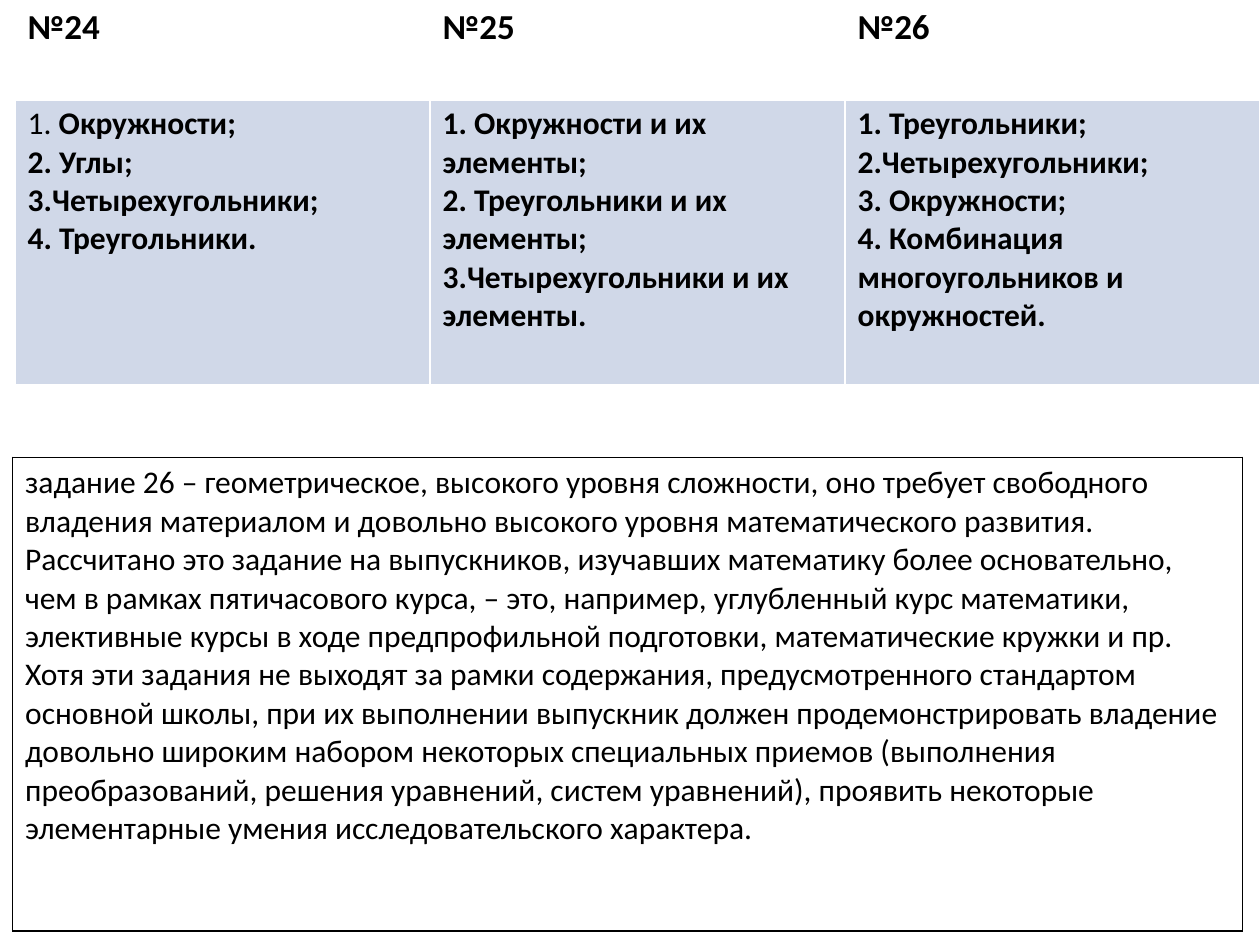
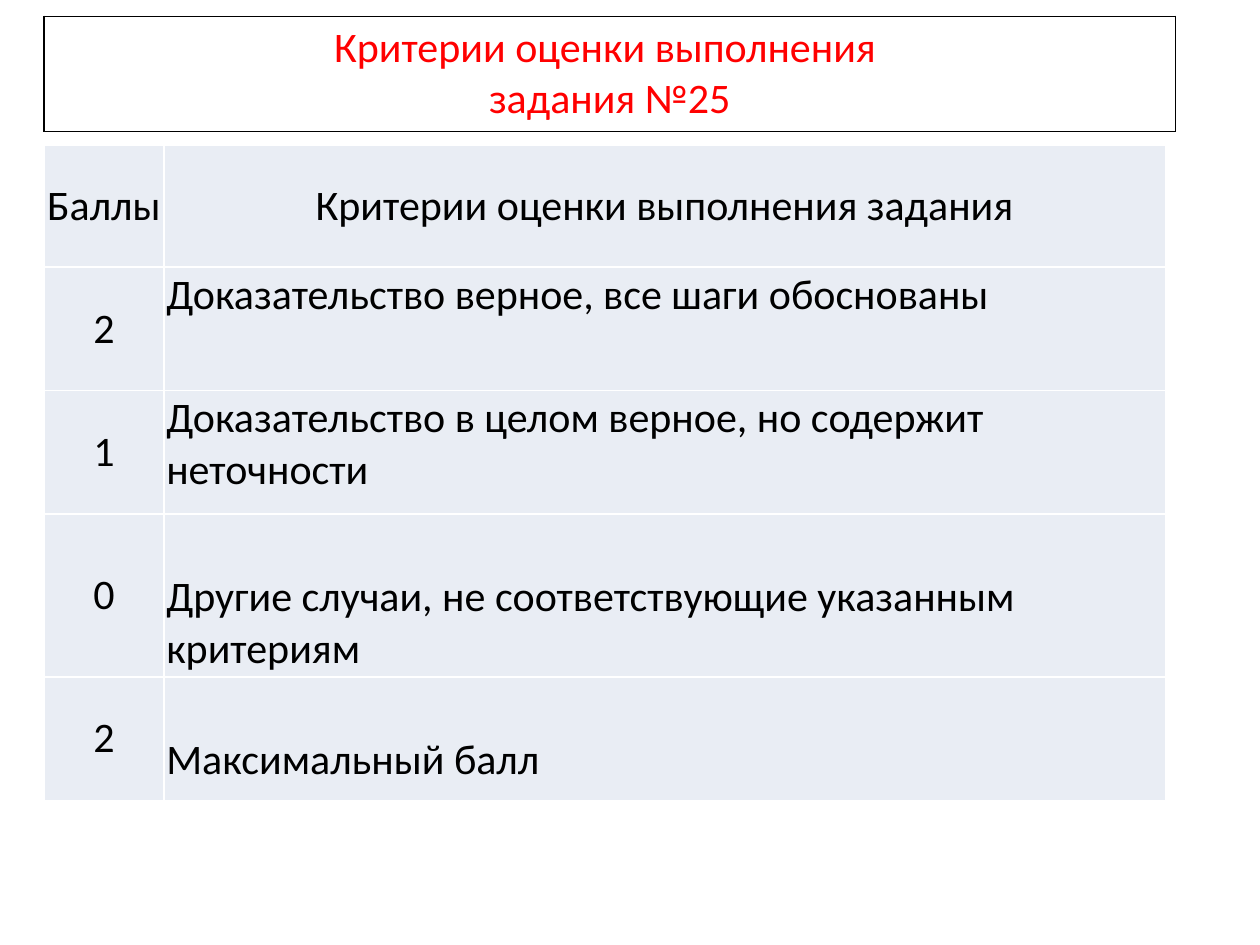
import pptx
import pptx.util
import pptx.dml.color
import pptx.enum.text
import pptx.oxml
import pptx.oxml.ns

Inches = pptx.util.Inches
Pt = pptx.util.Pt
PP_ALIGN = pptx.enum.text.PP_ALIGN
ANCHOR = pptx.enum.text.MSO_ANCHOR

FONT = "Calibri"
COLORS = {
    "text": "000000",
    "title": "FF0000",
    "frame": "000000",
    "grid": "FFFFFF",
    "heading": "FFFFFF",
    "topics": "D0D8E8",
    "criteria": "E9EDF4",
}

TOPICS = {
    "№24": [
        [("1.", False), (" Окружности;", True)],
        [("2. Углы;", True)],
        [("3.Четырехугольники;", True)],
        [("4. Треугольники.", True)],
    ],
    "№25": [
        [("1. Окружности и их элементы;", True)],
        [("2. Треугольники и их элементы;", True)],
        [("3.Четырехугольники и их элементы.", True)],
    ],
    "№26": [
        [("1. Треугольники;", True)],
        [("2.Четырехугольники;", True)],
        [("3. Окружности;", True)],
        [("4. Комбинация многоугольников и окружностей.", True)],
    ],
}

TASK_26 = (
    "задание 26 – геометрическое, высокого уровня сложности, оно требует свободного "
    "владения материалом и довольно высокого уровня математического развития. "
    "Рассчитано это задание на выпускников, изучавших математику более основательно, "
    "чем в рамках пятичасового курса, – это, например, углубленный курс математики, "
    "элективные курсы в ходе предпрофильной подготовки, математические кружки и пр. "
    "Хотя эти задания не выходят за рамки содержания, предусмотренного стандартом "
    "основной школы, при их выполнении выпускник должен продемонстрировать владение "
    "довольно широким набором некоторых специальных приемов (выполнения "
    "преобразований, решения уравнений, систем уравнений), проявить некоторые "
    "элементарные умения исследовательского характера."
)

TITLE = "Критерии оценки выполнения \nзадания №25"

# Score, criterion, row height, space above the criterion
CRITERIA = [
    ("2", "Доказательство верное, все шаги обоснованы", 0.98, 0.02),
    ("1", "Доказательство в целом верное, но содержит неточности", 0.98, 0.02),
    ("0", "Другие случаи, не соответствующие указанным критериям", 1.29, 0.46),
    ("2", "Максимальный балл", 0.98, 0.46),
]


def rgb(name):
    return pptx.dml.color.RGBColor.from_string(COLORS[name])


def add_run(paragraph, text, size, bold, color):
    """Add the text as runs, with a line break at each new line."""
    for index, line in enumerate(text.split("\n")):
        if index:
            paragraph.add_line_break()
        run = paragraph.add_run()
        run.text = line
        run.font.name = FONT
        run.font.size = Pt(size)
        run.font.bold = bold
        run.font.color.rgb = rgb(color)


def add_grid(slide, left, top, widths, heights):
    """Add a table without style banding and return it."""
    grid = slide.shapes.add_table(
        len(heights), len(widths), Inches(left), Inches(top),
        Inches(sum(widths)), Inches(sum(heights))).table
    grid.first_row = grid.horz_banding = False
    for column, width in zip(grid.columns, widths):
        column.width = Inches(width)
    for row, height in zip(grid.rows, heights):
        row.height = Inches(height)
    return grid


def set_borders(cell, color, bottom=1):
    """Draw 1 pt borders; the bottom one may be thicker."""
    properties = cell._tc.get_or_add_tcPr()
    for index, side in enumerate("LRTB"):
        width = Pt(bottom if side == "B" else 1)
        properties.insert(index, pptx.oxml.parse_xml(
            f'<a:ln{side} {pptx.oxml.ns.nsdecls("a")} w="{width}"><a:solidFill>'
            f'<a:srgbClr val="{COLORS[color]}"/></a:solidFill></a:ln{side}>'))


def fill_cell(cell, paragraphs, size, fill=None, border="grid", bottom=1,
              align=PP_ALIGN.LEFT, anchor=ANCHOR.TOP, color="text"):
    """Write paragraphs, each a list of (text, bold) runs, into a cell."""
    if fill:
        cell.fill.solid()
        cell.fill.fore_color.rgb = rgb(fill)
    else:
        cell.fill.background()
    set_borders(cell, border, bottom)
    cell.vertical_anchor = anchor
    for index, runs in enumerate(paragraphs):
        frame = cell.text_frame
        paragraph = frame.add_paragraph() if index else frame.paragraphs[0]
        paragraph.alignment = align
        for text, bold in runs:
            add_run(paragraph, text, size, bold, color)


def add_framed_text(slide, left, top, width, height, text, size, **style):
    """Add a one-cell table with a thin frame."""
    framed = add_grid(slide, left, top, [width], [height])
    fill_cell(framed.cell(0, 0), [[(text, False)]], size, border="frame", **style)


def fill_criteria_cell(cell, text, centred, space_above=0.02):
    cell.margin_left = cell.margin_right = cell.margin_bottom = Inches(0.02)
    cell.margin_top = Inches(space_above)
    fill_cell(cell, [[(text, False)]], 24, "criteria",
              align=PP_ALIGN.CENTER if centred else PP_ALIGN.LEFT,
              anchor=ANCHOR.MIDDLE if centred else ANCHOR.TOP)


def build_topics_slide(prs):
    slide = prs.slides.add_slide(prs.slide_layouts[6])

    # Topics by task number
    column_width = 9.88 / len(TOPICS)
    topics = add_grid(slide, 0.12, 0, [column_width] * len(TOPICS), [0.78, 2.27])
    for column, (task, items) in enumerate(TOPICS.items()):
        fill_cell(topics.cell(0, column), [[(task, True)]], 20, "heading", bottom=3)
        fill_cell(topics.cell(1, column), items, 18, "topics")

    # Description of task 26
    add_framed_text(slide, 0.1, 3.63, 9.76, 3.76, TASK_26, 18)


def build_criteria_slide(prs):
    slide = prs.slides.add_slide(prs.slide_layouts[6])

    # Framed title
    add_framed_text(slide, 0.35, 0.13, 8.98, 0.91, TITLE, 24,
                    align=PP_ALIGN.CENTER, color="title")

    # Scoring table
    heights = [0.97] + [height for _, _, height, _ in CRITERIA]
    scoring = add_grid(slide, 0.35, 1.15, [0.95, 7.95], heights)
    for column, heading in enumerate(["Баллы", "Критерии оценки выполнения задания"]):
        fill_criteria_cell(scoring.cell(0, column), heading, centred=True)
    for row, (score, criterion, _, space_above) in enumerate(CRITERIA, start=1):
        fill_criteria_cell(scoring.cell(row, 0), score, centred=True)
        fill_criteria_cell(scoring.cell(row, 1), criterion, False, space_above)


def main():
    prs = pptx.Presentation()
    prs.slide_width, prs.slide_height = Inches(10), Inches(7.5)
    build_topics_slide(prs)
    build_criteria_slide(prs)
    prs.save("out.pptx")


if __name__ == "__main__":
    main()
